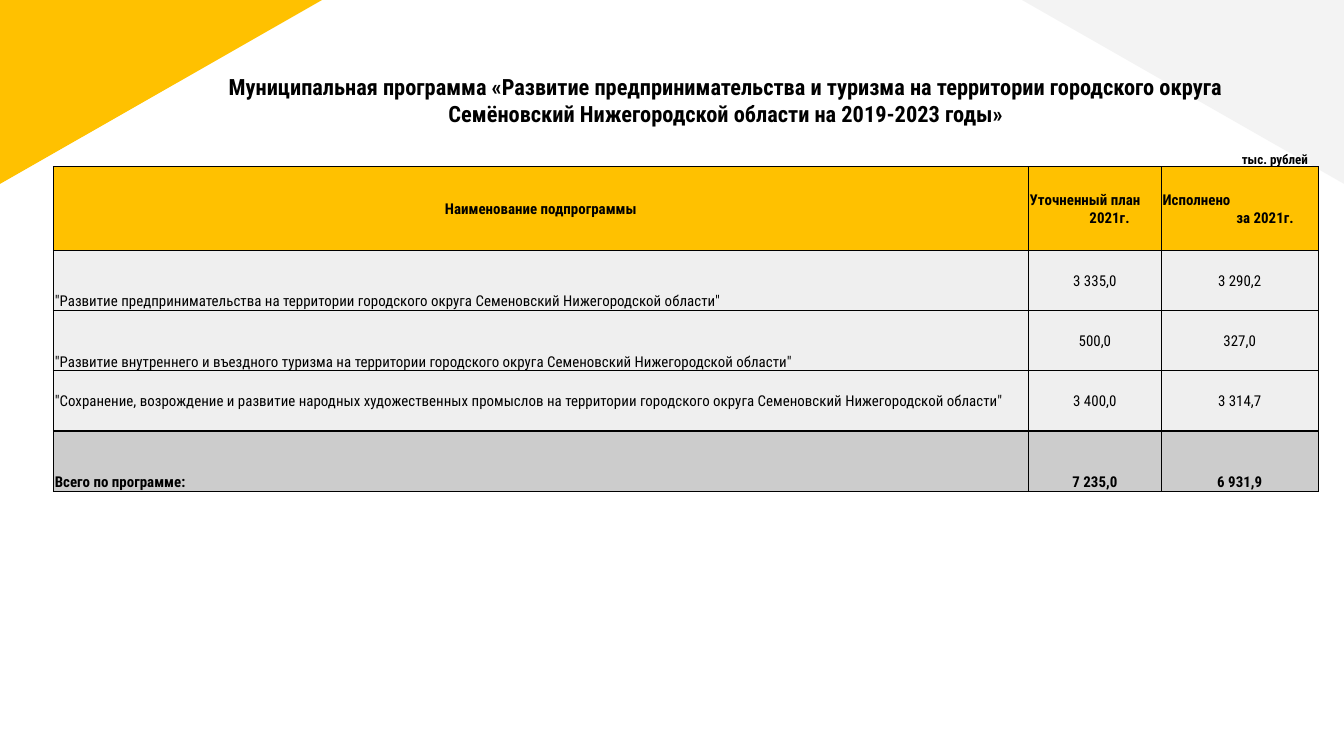
from lxml.etree import SubElement
from pptx import Presentation
from pptx.dml.color import RGBColor
from pptx.enum.shapes import MSO_SHAPE
from pptx.enum.text import MSO_ANCHOR, PP_ALIGN
from pptx.oxml.ns import qn
from pptx.util import Pt

BLACK = RGBColor(0x00, 0x00, 0x00)
AMBER = RGBColor(0xFF, 0xC1, 0x00)
PALE_GRAY = RGBColor(0xF3, 0xF3, 0xF3)
ROW_GRAY = RGBColor(0xEF, 0xEF, 0xEF)
TOTAL_GRAY = RGBColor(0xCC, 0xCC, 0xCC)


def style_paragraph(paragraph, size, bold, align):
    paragraph.alignment = align
    paragraph.font.name = "Roboto Condensed"
    paragraph.font.size = Pt(size)
    paragraph.font.bold = bold
    paragraph.font.color.rgb = BLACK


def add_borders(cell):
    properties = cell._tc.get_or_add_tcPr()
    for position, side in enumerate(("a:lnL", "a:lnR", "a:lnT", "a:lnB")):
        border = properties.makeelement(qn(side), {"w": str(Pt(0.75))})
        fill = SubElement(border, qn("a:solidFill"))
        SubElement(fill, qn("a:srgbClr"), val=str(BLACK))
        properties.insert(position, border)


presentation = Presentation()
presentation.slide_width = Pt(720)
presentation.slide_height = Pt(405)
slide = presentation.slides.add_slide(presentation.slide_layouts[6])

for left, color, flipped in ((0, AMBER, True), (547.5, PALE_GRAY, False)):
    corner = slide.shapes.add_shape(
        MSO_SHAPE.RIGHT_TRIANGLE, Pt(left), Pt(0), Pt(172.5), Pt(98.5)
    )
    corner.shadow.inherit = False
    corner.fill.solid()
    corner.fill.fore_color.rgb = color
    corner.line.fill.background()
    corner.rotation = 180
    if flipped:
        corner._element.spPr.xfrm.set("flipH", "1")

header = ["Наименование подпрограммы", "Уточненный план\n2021г.", "Исполнено\nза 2021г."]
programs = [
    ['"Развитие предпринимательства на территории городского округа Семеновский Нижегородской области"', "3 335,0", "3 290,2"],
    ['"Развитие внутреннего и въездного туризма на территории городского округа Семеновский Нижегородской области"', "500,0", "327,0"],
    ['"Сохранение, возрождение и развитие народных художественных промыслов на территории городского округа Семеновский Нижегородской области"', "3 400,0", "3 314,7"],
]
total = ["Всего по программе:", "7 235,0", "6 931,9"]
rows = [header, *programs, total]
fills = [AMBER, ROW_GRAY, ROW_GRAY, ROW_GRAY, TOTAL_GRAY]
column_widths = [522.3, 71.2, 84]
row_heights = [44.6] + [32.3] * 4
second_line_indents = {1: 32, 2: 39.5}
bottom_cells = {(1, 0), (2, 0), (4, 0), (4, 1), (4, 2)}

budget = slide.shapes.add_table(
    len(rows), len(header), Pt(28.7), Pt(89.4), Pt(sum(column_widths)), Pt(sum(row_heights))
).table
for column, width in zip(budget.columns, column_widths):
    column.width = Pt(width)
for row, height in zip(budget.rows, row_heights):
    row.height = Pt(height)

for r, texts in enumerate(rows):
    for c, text in enumerate(texts):
        cell = budget.cell(r, c)
        cell.text = text
        cell.fill.solid()
        cell.fill.fore_color.rgb = fills[r]
        cell.margin_left = cell.margin_right = cell.margin_top = Pt(0.7)
        cell.margin_bottom = Pt(0)
        cell.vertical_anchor = MSO_ANCHOR.BOTTOM if (r, c) in bottom_cells else MSO_ANCHOR.MIDDLE
        add_borders(cell)
        lines = cell.text_frame.paragraphs
        left_aligned = len(lines) > 1 or (c == 0 and r > 0)
        for line in lines:
            style_paragraph(
                line, 8, r in (0, len(rows) - 1), PP_ALIGN.LEFT if left_aligned else PP_ALIGN.CENTER
            )
        if len(lines) > 1:
            lines[1]._p.get_or_add_pPr().set("marL", str(Pt(second_line_indents[c])))

title = slide.shapes.add_textbox(Pt(70), Pt(32), Pt(638), Pt(56)).text_frame
title.word_wrap = True
title.margin_left = title.margin_right = title.margin_top = title.margin_bottom = Pt(7.2)
title.text = (
    "Муниципальная программа «Развитие предпринимательства и туризма на территории городского округа\n"
    "Семёновский Нижегородской области на 2019-2023 годы»"
)
for line in title.paragraphs:
    style_paragraph(line, 12, True, PP_ALIGN.CENTER)

unit = slide.shapes.add_textbox(Pt(665.3), Pt(81.2), Pt(54), Pt(9)).text_frame
unit.word_wrap = True
unit.margin_left = unit.margin_right = unit.margin_top = unit.margin_bottom = Pt(0)
unit.text = "тыс. рублей"
style_paragraph(unit.paragraphs[0], 7, True, PP_ALIGN.LEFT)

presentation.save("out.pptx")
